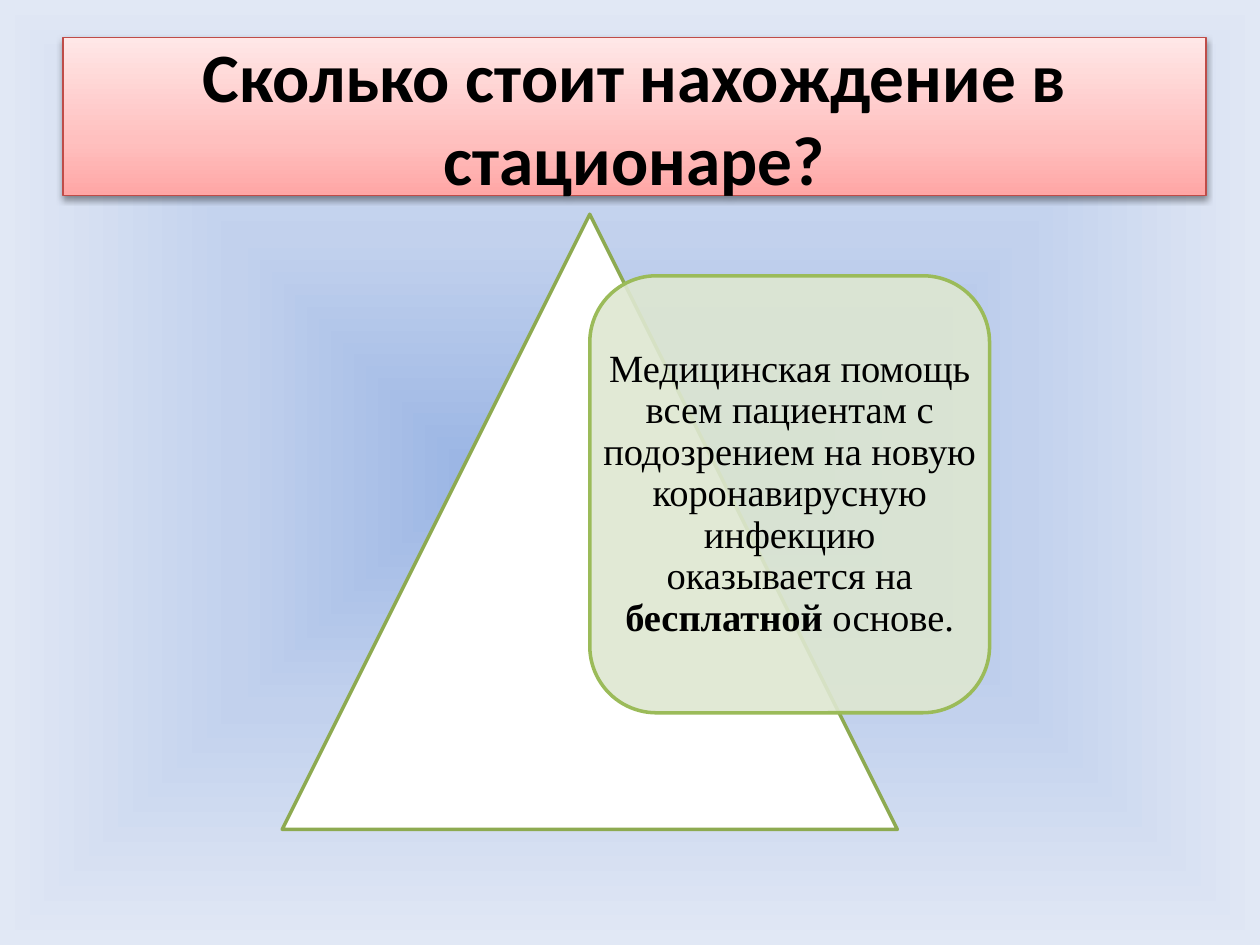
from lxml import etree
from pptx import Presentation
from pptx.dml.color import RGBColor
from pptx.enum.shapes import MSO_SHAPE
from pptx.enum.text import MSO_ANCHOR, MSO_AUTO_SIZE, PP_ALIGN
from pptx.oxml import parse_xml
from pptx.oxml.ns import nsdecls, qn
from pptx.util import Cm, Pt

TRIANGLE, ROUNDED = MSO_SHAPE.ISOSCELES_TRIANGLE, MSO_SHAPE.ROUNDED_RECTANGLE
MIDDLE, CENTER, NO_FIT = MSO_ANCHOR.MIDDLE, PP_ALIGN.CENTER, MSO_AUTO_SIZE.NONE

BLACK = RGBColor(0x00, 0x00, 0x00)
WHITE = RGBColor(0xFF, 0xFF, 0xFF)
RED = RGBColor(0xBF, 0x4C, 0x48)
DARK_GREEN = RGBColor(0x8D, 0xAA, 0x51)
GREEN = RGBColor(0x9B, 0xBB, 0x59)
PALE_GREEN = RGBColor(0xDE, 0xE7, 0xD1)
BLUES = {0: RGBColor(0x9A, 0xB5, 0xE4), 50: RGBColor(0xC2, 0xD1, 0xED),
         100: RGBColor(0xE1, 0xE8, 0xF5)}
PINKS = {0: RGBColor(0xFF, 0xA6, 0xA5), 35: RGBColor(0xFF, 0xC0, 0xBF),
         100: RGBColor(0xFF, 0xE7, 0xE7)}


def set_gradient(fill, owner, stops, direction):
    """Give the fill the wanted colour stops and direction."""
    fill.gradient()
    gradient = owner.find(".//" + qn("a:gradFill"))
    stop_xml = "".join(f'<a:gs pos="{place * 1000}"><a:srgbClr val="{color}"/></a:gs>'
                       for place, color in stops.items())
    gradient.getparent().replace(gradient, parse_xml(
        f'<a:gradFill {nsdecls("a")} rotWithShape="1"><a:gsLst>{stop_xml}</a:gsLst>'
        f'{direction}</a:gradFill>'))


def add_text(para, text, **font):
    """Add a run with the given font values."""
    span = para.add_run()
    span.text = text
    span.font.color.rgb = BLACK
    for name, value in font.items():
        setattr(span.font, name, value)


deck = Presentation()
deck.slide_width, deck.slide_height = Cm(25.4), Cm(19.05)
page = deck.slides.add_slide(deck.slide_layouts[5])

# Background
set_gradient(page.background.fill, page._element, BLUES,
             '<a:path path="shape"><a:fillToRect l="50000" t="50000" r="50000" b="50000"/></a:path>')

# Title
title = page.shapes.title
title.left, title.top, title.width, title.height = Cm(1.27), Cm(0.76), Cm(23.04), Cm(3.18)
set_gradient(title.fill, title._element.spPr, PINKS, '<a:lin ang="16200000" scaled="1"/>')
title.line.color.rgb = RED
title.line.width = Pt(0.75)
title._element.spPr.append(parse_xml(
    f'<a:effectLst {nsdecls("a")}><a:outerShdw blurRad="40000" dist="20000" dir="5400000" '
    'rotWithShape="0"><a:srgbClr val="000000"><a:alpha val="38000"/></a:srgbClr>'
    '</a:outerShdw></a:effectLst>'))
title.text_frame.auto_size = NO_FIT
title.text_frame.vertical_anchor = MIDDLE
para = title.text_frame.paragraphs[0]
para.alignment = CENTER
add_text(para, "Сколько стоит нахождение в стационаре?", name="Calibri", size=Pt(39.6), bold=True)

# Triangle and rounded card
card_place = Cm(11.89), Cm(5.56), Cm(8.06), Cm(8.81)
for kind, place, color, edge in (
        (TRIANGLE, (Cm(5.69), Cm(4.32), Cm(12.4), Cm(12.4)), WHITE, DARK_GREEN),
        (ROUNDED, card_place, PALE_GREEN, GREEN)):
    shape = page.shapes.add_shape(kind, *place)
    shape.shadow.inherit = False
    shape.fill.solid()
    shape.fill.fore_color.rgb = color
    shape.line.color.rgb = edge
    shape.line.width = Pt(2)

# The card lets the triangle show through
card_color = shape._element.spPr.find(qn("a:solidFill")).find(qn("a:srgbClr"))
etree.SubElement(card_color, qn("a:alpha"), val="90000")

# Card text
box = page.shapes.add_textbox(*card_place)
frame_format = {"word_wrap": True, "vertical_anchor": MIDDLE, "margin_left": Cm(0.23),
                "margin_right": Cm(0.23), "margin_top": Cm(0.23), "margin_bottom": Cm(0.23)}
for name, value in frame_format.items():
    setattr(box.text_frame, name, value)
para = box.text_frame.paragraphs[0]
para.alignment = CENTER
para.line_spacing = 0.9
for text, bold in (
        ("Медицинская помощь всем пациентам с подозрением на новую "
         "коронавирусную инфекцию оказывается на ", False),
        ("бесплатной", True),
        (" основе.", False)):
    add_text(para, text, name="Times New Roman", size=Pt(22), bold=bold)

deck.save("out.pptx")
